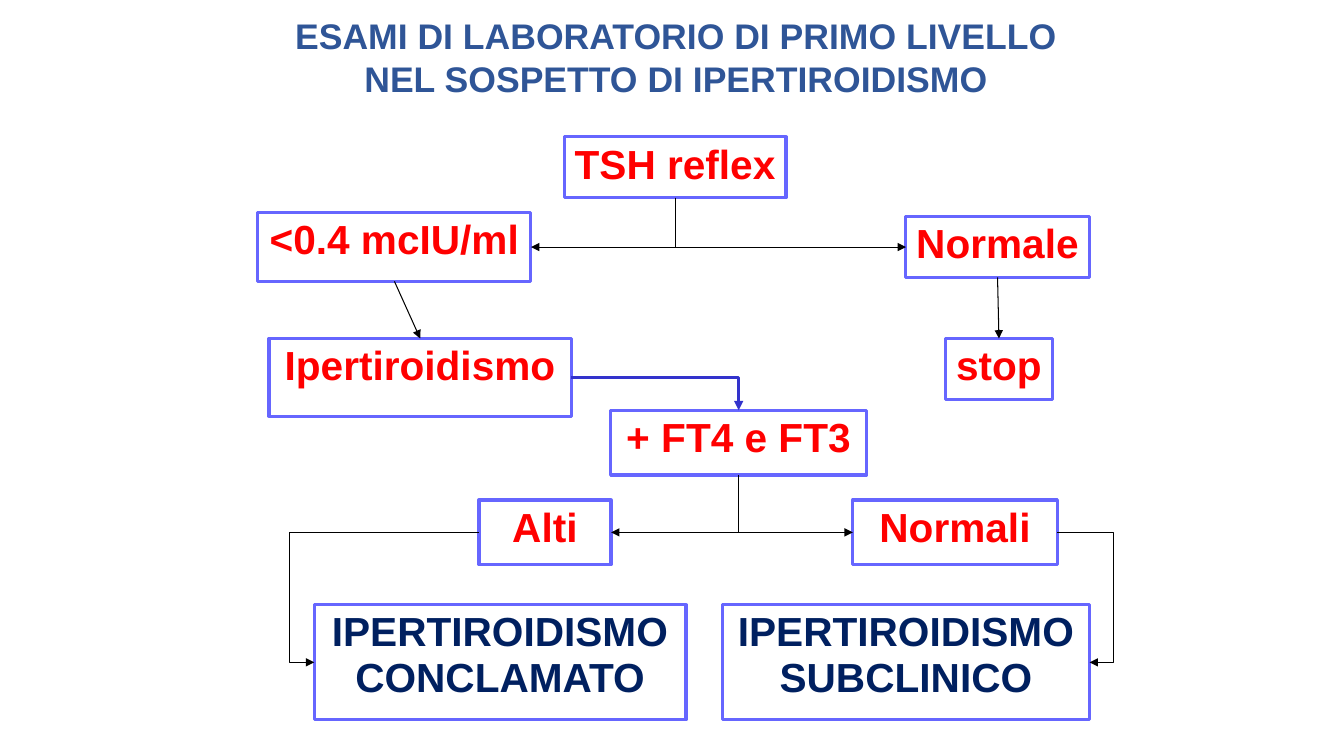
from lxml import etree
from pptx import Presentation
from pptx.dml.color import RGBColor as Rgb
from pptx.enum.shapes import MSO_CONNECTOR as Link, MSO_SHAPE as Form
from pptx.enum.text import MSO_ANCHOR as Anchor, PP_ALIGN as Align
from pptx.oxml.ns import qn
from pptx.util import Cm, Pt

COLORS = {"edge": "6666FF", "red": "FF0000", "navy": "002060",
          "title": "2F5597", "black": "000000", "blue": "3333CC"}
TOP, LEFT, BOTTOM, RIGHT = range(4)


def write(shape, text, size=29, color="red", space=0.93, wrap=True, inset=(0.25, 0.15)):
    frame = shape.text_frame
    frame.text = text
    frame.word_wrap = wrap
    frame.vertical_anchor = Anchor.TOP
    frame.margin_left = frame.margin_right = Cm(inset[0])
    frame.margin_top = frame.margin_bottom = Cm(inset[1])
    for para in frame.paragraphs:
        para.alignment = Align.CENTER
        para.line_spacing = space
        font = para.runs[0].font
        font.name, font.size, font.bold = "Arial", Pt(size), True
        font.color.rgb = Rgb.from_string(COLORS[color])


def join(start, out, end, into, bend=None, color="black", width=0.75):
    """Link two boxes; bend is None (straight), "drop", "turn" or a bend ratio."""
    line = slide.shapes.add_connector(
        Link.ELBOW if bend else Link.STRAIGHT, 0, 0, 0, 0)
    line.begin_connect(start, out)
    line.end_connect(end, into)
    line.line.width = Pt(width)
    line.line.color.rgb = Rgb.from_string(COLORS[color])
    props = line._element.spPr
    geom = props.find(qn("a:prstGeom"))
    if bend in ("drop", "turn"):
        geom.set("prst", "bentConnector2")
    elif bend:
        guides = geom.get_or_add_avLst()
        etree.SubElement(guides, qn("a:gd"), name="adj1", fmla=f"val {round(bend * 100000)}")
    if bend == "drop":
        # Going down first takes a quarter turn about the centre of the link
        wide, high = line.width, line.height
        mid_x, mid_y = line.left + wide // 2, line.top + high // 2
        right = line.end_x > line.begin_x
        line.left, line.top = mid_x - high // 2, mid_y - wide // 2
        line.width, line.height = high, wide
        frame = props.find(qn("a:xfrm"))
        frame.set("rot", "16200000" if right else "5400000")
        frame.set("flipH", "1" if right else "0")
    etree.SubElement(line.line._get_or_add_ln(), qn("a:tailEnd"), type="triangle")
    etree.SubElement(props, qn("a:effectLst"))


deck = Presentation()
deck.slide_width, deck.slide_height = Cm(33.87), Cm(19.05)
slide = deck.slides.add_slide(deck.slide_layouts[6])

# Boxes: name, text, left, top, width, height, text colour, wrap
boxes = {}
for name, text, left, top, wide, high, color, wrap in [
    ("tsh", "TSH reflex", 14.22, 3.45, 5.59, 1.53, "red", False),
    ("low", "<0.4 mcIU/ml", 6.5, 5.36, 6.88, 1.73, "red", True),
    ("normal", "Normale", 22.83, 5.46, 4.62, 1.53, "red", False),
    ("hyper", "Ipertiroidismo", 6.78, 8.53, 7.62, 1.96, "red", True),
    ("extra", "+ FT4 e FT3", 15.39, 10.34, 6.45, 1.63, "red", True),
    ("high", "Alti", 12.07, 12.6, 3.33, 1.63, "red", True),
    ("even", "Normali", 21.49, 12.6, 5.16, 1.63, "red", True),
    ("stop", "stop", 23.83, 8.53, 2.69, 1.53, "red", False),
    ("overt", "IPERTIROIDISMO CONCLAMATO", 7.92, 15.24, 9.37, 2.9, "navy", True),
    ("mild", "IPERTIROIDISMO SUBCLINICO", 18.21, 15.24, 9.25, 2.9, "navy", True),
]:
    box = slide.shapes.add_shape(Form.RECTANGLE, Cm(left), Cm(top), Cm(wide), Cm(high))
    box.shadow.inherit = False
    box.fill.background()
    box.line.color.rgb = Rgb.from_string(COLORS["edge"])
    box.line.width = Pt(2.3)
    write(box, text, color=color, wrap=wrap)
    boxes[name] = box

# Links between boxes
for start, out, end, into, bend in [
    ("tsh", BOTTOM, "low", RIGHT, "drop"),
    ("tsh", BOTTOM, "normal", LEFT, "drop"),
    ("low", BOTTOM, "hyper", TOP, None),
    ("normal", BOTTOM, "stop", TOP, None),
    ("extra", BOTTOM, "high", RIGHT, "drop"),
    ("extra", BOTTOM, "even", LEFT, "drop"),
    ("high", LEFT, "overt", LEFT, 1.15),
    ("even", RIGHT, "mild", RIGHT, 1.75),
]:
    join(boxes[start], out, boxes[end], into, bend)
join(boxes["hyper"], RIGHT, boxes["extra"], TOP, "turn", color="blue", width=2.25)

# Title
title = slide.shapes.add_textbox(Cm(7.14), Cm(0.23), Cm(19.81), Cm(2.41))
write(title, "ESAMI DI LABORATORIO DI PRIMO LIVELLO\nNEL SOSPETTO DI IPERTIROIDISMO",
      size=25.4, color="title", space=1.0, wrap=False, inset=(0.23, 0.13))

deck.save("out.pptx")
